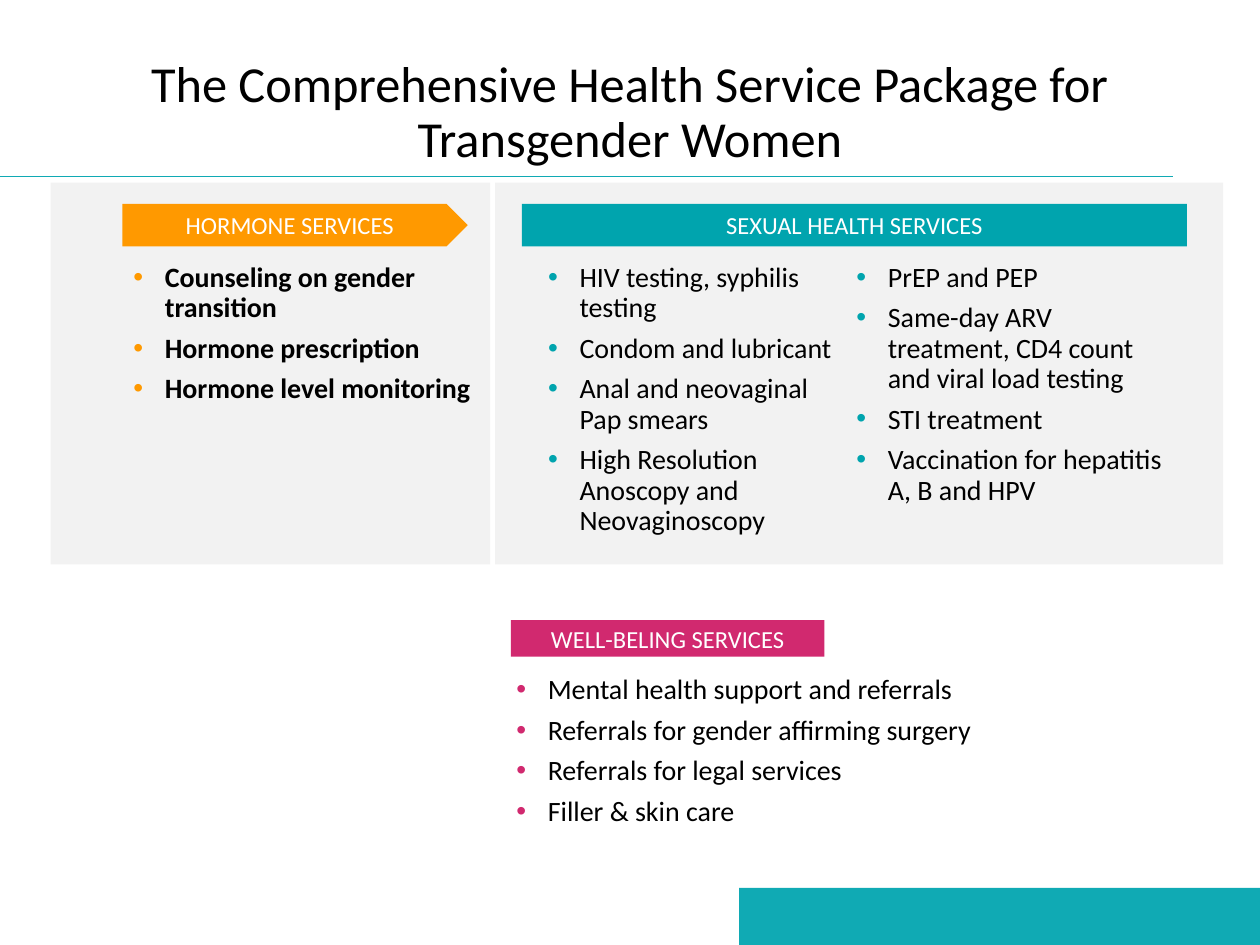
from lxml.etree import SubElement
from pptx import Presentation
from pptx.dml.color import RGBColor
from pptx.enum.shapes import MSO_CONNECTOR as Connector, MSO_SHAPE as Shape
from pptx.enum.text import MSO_ANCHOR as Anchor, PP_ALIGN as Align
from pptx.oxml.ns import qn
from pptx.util import Cm, Pt

FONT = "Calibri"
BLACK, WHITE, GREY = "000000", "FFFFFF", "F2F2F2"
ACCENT, TEAL, ORANGE, PINK = "10AAB4", "00A4AE", "FF9900", "D1296F"

# All places are left, top, width, height in centimetres.
TITLE = "The Comprehensive Health Service Package for Transgender Women"
TITLE_PLACE = (1.75, 1.02, 21.9, 2.54)
RULE_END, RULE_TOP = 23.65, 3.56
FOOTER_PLACE = (14.9, 17.9, 10.5, 1.15)
PANEL_PLACES = [(9.98, 3.68, 14.68, 7.7), (1.02, 3.68, 8.86, 7.7)]

SERVICES = [
    {
        "heading": "SEXUAL HEALTH SERVICES", "color": TEAL, "shape": Shape.RECTANGLE,
        "heading_place": (10.52, 4.11, 13.41, 0.86),
        "list_place": (10.8, 5.18, 12.93, 6.1), "columns": 2, "bold": False,
        "items": [
            "HIV testing, syphilis testing",
            "Condom and lubricant",
            "Anal and neovaginal Pap smears",
            "High Resolution Anoscopy and Neovaginoscopy",
            "PrEP and PEP",
            "Same-day ARV treatment, CD4 count and viral load testing",
            "STI treatment",
            "Vaccination for hepatitis A, B and HPV",
        ],
    },
    {
        "heading": "HORMONE SERVICES", "color": ORANGE, "shape": Shape.PENTAGON,
        "heading_place": (2.47, 4.11, 6.96, 0.86),
        "list_place": (2.44, 5.18, 7.72, 7.7), "columns": 1, "bold": True,
        "items": [
            "Counseling on gender transition",
            "Hormone prescription",
            "Hormone level monitoring",
        ],
    },
    {
        "heading": "WELL-BELING SERVICES", "color": PINK, "shape": Shape.RECTANGLE,
        "heading_place": (10.3, 12.5, 6.32, 0.74),
        "list_place": (10.16, 13.49, 13.77, 4.17), "columns": 1, "bold": False,
        "items": [
            "Mental health support and referrals",
            "Referrals for gender affirming surgery",
            "Referrals for legal services",
            "Filler & skin care",
        ],
    },
]


def rgb(color):
    return RGBColor.from_string(color)


def in_cm(place):
    return [Cm(value) for value in place]


def style(paragraph, size, color, bold=False):
    for span in paragraph.runs:
        span.font.name = FONT
        span.font.size = Pt(size)
        span.font.bold = bold
        span.font.color.rgb = rgb(color)


def add_block(page, place, color, shape=Shape.RECTANGLE):
    block = page.shapes.add_shape(shape, *in_cm(place))
    block.shadow.inherit = False
    block.fill.solid()
    block.fill.fore_color.rgb = rgb(color)
    block.line.fill.background()
    return block


def add_centred(box, text, size, color):
    """Put one centred paragraph in the middle of a box."""
    frame = box.text_frame
    frame.text = text
    frame.word_wrap = True
    frame.vertical_anchor = Anchor.MIDDLE
    paragraph = frame.paragraphs[0]
    paragraph.alignment = Align.CENTER
    style(paragraph, size, color)
    return paragraph


def add_bullet(paragraph, color):
    properties = paragraph._p.get_or_add_pPr()
    properties.set("marL", str(Cm(0.635)))
    properties.set("indent", str(-Cm(0.635)))
    bullet_color = SubElement(properties, qn("a:buClr"))
    SubElement(bullet_color, qn("a:srgbClr"), val=color)
    SubElement(properties, qn("a:buFont"), typeface="Arial")
    SubElement(properties, qn("a:buChar"), char="•")


def add_list(page, place, items, color, columns, bold):
    frame = page.shapes.add_textbox(*in_cm(place)).text_frame
    frame.text = "\n".join(items)
    frame.word_wrap = True
    if columns > 1:
        frame._txBody.bodyPr.set("numCol", str(columns))
    for index, paragraph in enumerate(frame.paragraphs):
        add_bullet(paragraph, color)
        paragraph.line_spacing = 0.9
        paragraph.space_before = Pt(6 if index else 0)
        style(paragraph, 16, BLACK, bold)


def add_rule(page):
    rule = page.shapes.add_connector(
        Connector.STRAIGHT, *in_cm((0, RULE_TOP, RULE_END, RULE_TOP)))
    rule.line.color.rgb = rgb(ACCENT)
    rule.line.width = Pt(1)
    SubElement(rule._element.spPr, qn("a:effectLst"))


def main():
    deck = Presentation()
    deck.slide_width, deck.slide_height = Cm(25.4), Cm(19.05)
    page = deck.slides.add_slide(deck.slide_layouts[6])

    add_rule(page)
    add_block(page, FOOTER_PLACE, ACCENT)
    for place in PANEL_PLACES:
        add_block(page, place, GREY)

    title = page.shapes.add_textbox(*in_cm(TITLE_PLACE))
    add_centred(title, TITLE, 28.8, BLACK).line_spacing = 0.9

    for service in SERVICES:
        color = service["color"]
        add_list(page, service["list_place"], service["items"], color,
                 service["columns"], service["bold"])
        heading = add_block(page, service["heading_place"], color, service["shape"])
        add_centred(heading, service["heading"], 14, WHITE)

    deck.save("out.pptx")


if __name__ == "__main__":
    main()
